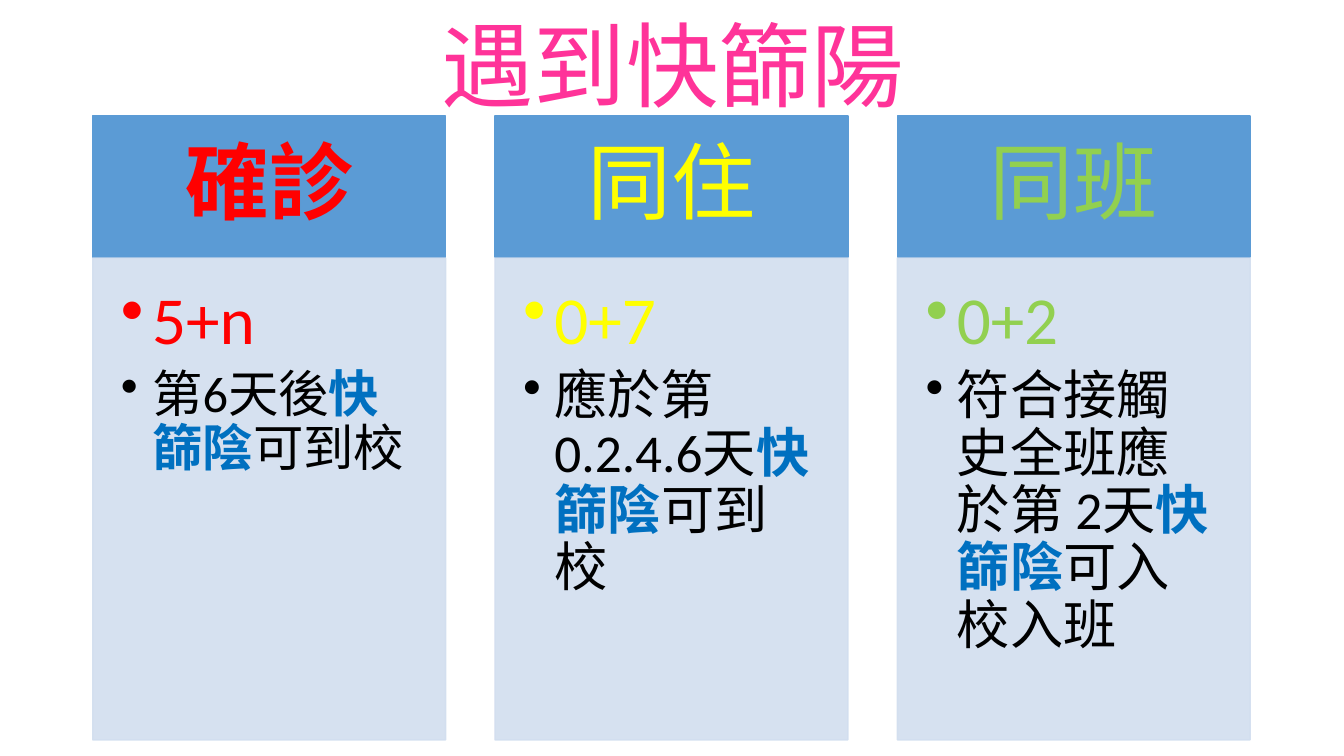
import pptx
import pptx.util
import pptx.dml.color
import pptx.enum.shapes
import pptx.enum.text
import pptx.oxml.ns
from lxml import etree

PX = 9144
THEME = {
    "latin": "Calibri", "cjk": "Noto Sans CJK SC",
    "title": "FF3399", "header": "5B9BD5", "panel": "D2DEEF",
    "text": "000000", "emphasis": "0070C0",
    "confirmed": "FF0000", "household": "FFFF00", "classmate": "92D050",
    "title_size": 66, "header_size": 60, "rule_size": 48,
    "line_width": 1, "panel_alpha": 90000,
}
qn = pptx.oxml.ns.qn
RGB = pptx.dml.color.RGBColor.from_string
ALIGN = pptx.enum.text.PP_ALIGN
ANCHOR = pptx.enum.text.MSO_ANCHOR

HEADER_FRAME = {"word_wrap": True, "vertical_anchor": ANCHOR.MIDDLE,
                "margin_left": 47 * PX, "margin_right": 47 * PX,
                "margin_top": 27 * PX, "margin_bottom": 27 * PX}
PANEL_FRAME = {"word_wrap": True, "vertical_anchor": ANCHOR.TOP,
               "margin_left": 28 * PX, "margin_right": 37 * PX,
               "margin_top": 28 * PX, "margin_bottom": 42 * PX}


def add_block(left, top, width, height, color, frame_format):
    block = slide.shapes.add_shape(pptx.enum.shapes.MSO_SHAPE.RECTANGLE,
                                   left * PX, top * PX, width * PX, height * PX)
    block.shadow.inherit = False
    for paint in (block.fill, block.line.fill):
        paint.solid()
        paint.fore_color.rgb = RGB(color)
    block.line.width = pptx.util.Pt(THEME["line_width"])
    for key, value in frame_format.items():
        setattr(block.text_frame, key, value)
    return block


def write(paragraph, align, size, latin, pieces):
    paragraph.alignment = align
    paragraph.line_spacing = 0.9
    for words, color, bold in pieces:
        run = paragraph.add_run()
        run.text = words
        run.font.color.rgb = RGB(color)
        for key, value in {"size": pptx.util.Pt(size), "bold": bold, "name": latin}.items():
            setattr(run.font, key, value)
        etree.SubElement(run.font._element, qn("a:ea"), typeface=THEME["cjk"])


deck = pptx.Presentation()
deck.slide_width, deck.slide_height = 1333 * PX, 750 * PX
slide = deck.slides.add_slide(deck.slide_layouts[6])

title = slide.shapes.add_textbox(92 * PX, -11 * PX, 1150 * PX, 161 * PX)
title.text_frame.word_wrap = True
title.text_frame.vertical_anchor = ANCHOR.MIDDLE
write(title.text_frame.paragraphs[0], ALIGN.CENTER, THEME["title_size"], THEME["cjk"],
      [("遇到快篩陽", THEME["title"], False)])

groups = [
    ("確診", True, "confirmed", "5+n", 36, "第6天後", "可到校"),
    ("同住", False, "household", "0+7", 38, "應於第0.2.4.6天", "可到校"),
    ("同班", False, "classmate", "0+2", 38, "符合接觸史全班應於第 2天", "可入校入班"),
]
for column, (group, bold, color_key, rule, detail_size, before, after) in enumerate(groups):
    left = 92 + 399 * column
    accent = THEME[color_key]

    header = add_block(left, 115, 350, 140, THEME["header"], HEADER_FRAME)
    write(header.text_frame.paragraphs[0], ALIGN.CENTER, THEME["header_size"], THEME["cjk"],
          [(group, accent, bold)])

    panel = add_block(left, 256, 350, 478, THEME["panel"], PANEL_FRAME)
    for color_node in panel._element.spPr.iter(qn("a:srgbClr")):
        etree.SubElement(color_node, qn("a:alpha"), val=str(THEME["panel_alpha"]))

    detail = [(before, THEME["text"], False),
              ("快篩陰", THEME["emphasis"], True),
              (after, THEME["text"], False)]
    lines = [(THEME["rule_size"], [(rule, accent, False)]), (detail_size, detail)]
    for row, (size, pieces) in enumerate(lines):
        frame = panel.text_frame
        bullet = frame.add_paragraph() if row else frame.paragraphs[0]
        properties = bullet._p.get_or_add_pPr()
        properties.set("marL", str(31 * PX))
        properties.set("indent", str(-31 * PX))
        etree.SubElement(properties, qn("a:buChar"), char="•")
        bullet.space_after = pptx.util.Pt(round(size * 0.15))
        write(bullet, ALIGN.LEFT, size, THEME["latin"], pieces)

deck.save("out.pptx")
